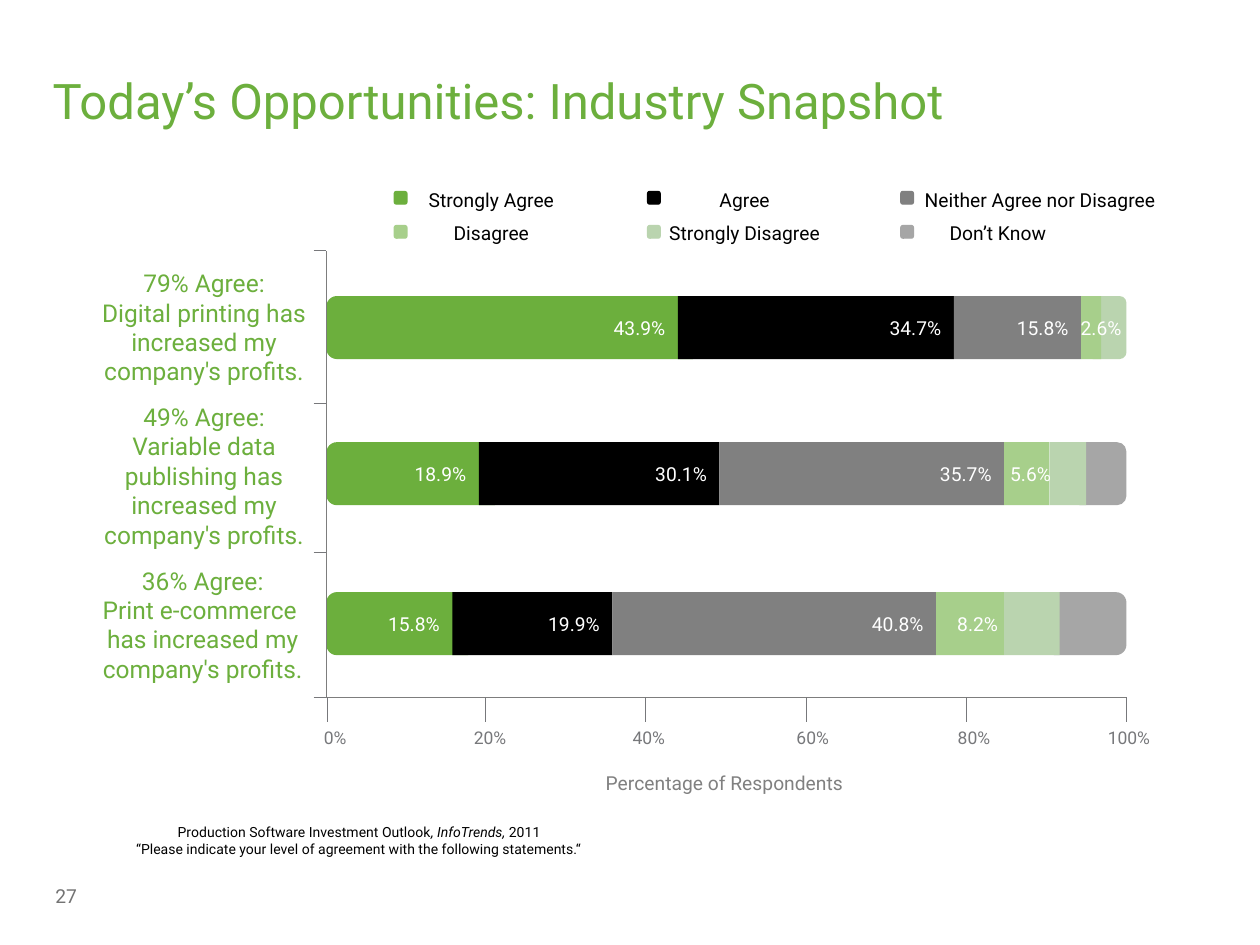
from dataclasses import dataclass

import pptx
import pptx.util
from lxml import etree
from pptx.dml.color import RGBColor
from pptx.enum.shapes import MSO_CONNECTOR, MSO_SHAPE
from pptx.enum.text import MSO_ANCHOR, PP_ALIGN
from pptx.oxml.ns import qn
from pptx.util import Inches

GREEN = RGBColor(0x6C, 0xAF, 0x3D)
MID_GREEN = RGBColor(0xA7, 0xCF, 0x8B)
PALE_GREEN = RGBColor(0xBA, 0xD4, 0xAF)
BLACK = RGBColor(0, 0, 0)
WHITE = RGBColor(0xFF, 0xFF, 0xFF)
GRAY = RGBColor(0x80, 0x80, 0x80)
LIGHT_GRAY = RGBColor(0xA6, 0xA6, 0xA6)
AXIS_GRAY = RGBColor(0x77, 0x78, 0x7B)
LINE_GRAY = RGBColor(0x7D, 0x7D, 0x7D)
PAGE_GRAY = RGBColor(0x73, 0x73, 0x73)

SEGMENT_COLORS = (GREEN, BLACK, GRAY, MID_GREEN, PALE_GREEN, LIGHT_GRAY)
AXIS_LEFT, AXIS_RIGHT, AXIS_TOP, AXIS_BOTTOM = 2.59, 8.94, 1.99, 5.53
BAR_HEIGHT = 0.5
FIRST_OVERLAP, LAST_OVERLAP = 0.2, 0.12  # rounded ends run under their neighbours
LABEL_WIDTH = 0.93


@dataclass
class Box:
    left: float
    top: float
    width: float
    height: float

    def lengths(self) -> list:
        return [Inches(v) for v in (self.left, self.top, self.width, self.height)]


@dataclass
class Bar:
    top: float
    edges: tuple  # right edges of all segments but the last
    labels: tuple
    small_label: tuple  # left and width of the fourth label
    statement: tuple  # paragraphs
    statement_box: Box


@dataclass
class LegendColumn:
    left: float
    entries: tuple  # name, colour, text width


BARS = (
    Bar(2.35, (5.38, 7.57, 8.58, 8.74), ("43.9%", "34.7%", "15.8%", "2.6%"), (8.07, 0.93),
        ("79% Agree:\vDigital printing has increased my company's profits.",),
        Box(0.64, 2.08, 1.96, 1.04)),
    Bar(3.51, (3.8, 5.71, 7.97, 8.33, 8.62), ("18.9%", "30.1%", "35.7%", "5.6%"), (7.85, 0.59),
        ("49% Agree:", "Variable data publishing has increased my company's profits."),
        Box(0.64, 3.14, 1.96, 1.28)),
    Bar(4.7, (3.59, 4.86, 7.43, 7.97, 8.41), ("15.8%", "19.9%", "40.8%", "8.2%"), (7.43, 0.59),
        ("36% Agree:", "Print e-commerce \vhas increased my company's profits."),
        Box(0.63, 4.44, 1.96, 1.04)),
)
LEGEND = (
    LegendColumn(3.13, (("Strongly Agree", GREEN, 1.27), ("Disagree", MID_GREEN, 1.27))),
    LegendColumn(5.14, (("Agree", BLACK, 1.27), ("Strongly Disagree", PALE_GREEN, 1.27))),
    LegendColumn(7.15, (("Neither Agree nor Disagree", GRAY, 1.94),
                        ("Don’t Know", LIGHT_GRAY, 1.27))),
)
# Tick position, label centre, label
TICKS = ((2.6, 2.66, "0%"), (3.85, 3.89, "20%"), (5.12, 5.15, "40%"),
         (6.4, 6.45, "60%"), (7.67, 7.73, "80%"), (8.94, 8.96, "100%"))
ROW_TICKS = (AXIS_TOP, 3.2, 4.38, AXIS_BOTTOM)


def add_text(shapes, box: Box, paragraphs: tuple, size: float, color: RGBColor,
             align=PP_ALIGN.CENTER, anchor=MSO_ANCHOR.TOP,
             insets: tuple = (0.1, 0.05, 0.1, 0.05)) -> None:
    """Each paragraph is a string or a tuple of (text, italic) runs."""
    tf = shapes.add_textbox(*box.lengths()).text_frame
    frame_format = {"word_wrap": True, "vertical_anchor": anchor}
    sides = ("margin_left", "margin_top", "margin_right", "margin_bottom")
    frame_format.update(zip(sides, map(Inches, insets)))
    for name, value in frame_format.items():
        setattr(tf, name, value)
    for i, content in enumerate(paragraphs):
        p = tf.paragraphs[0] if i == 0 else tf.add_paragraph()
        p.alignment = align
        if isinstance(content, str):
            p.text = content
        else:
            for text, italic in content:
                r = p.add_run()
                r.text = text
                r.font.italic = italic
        for r in p.runs:
            for name, value in {"name": "Roboto", "size": pptx.util.Pt(size)}.items():
                setattr(r.font, name, value)
            r.font.color.rgb = color


def add_block(shapes, box: Box, color: RGBColor, rounded: bool, outlined: bool = False) -> None:
    kind = MSO_SHAPE.ROUNDED_RECTANGLE if rounded else MSO_SHAPE.RECTANGLE
    sp = shapes.add_shape(kind, *box.lengths())
    sp.shadow.inherit = False
    sp.fill.solid()
    sp.fill.fore_color.rgb = color
    if outlined:
        sp.line.color.rgb = color
        sp.line.width = pptx.util.Pt(0.75)
    else:
        sp.line.fill.background()


def add_line(shapes, x1: float, y1: float, x2: float, y2: float,
             color: RGBColor = AXIS_GRAY) -> None:
    ends = [Inches(v) for v in (x1, y1, x2, y2)]
    line = shapes.add_connector(MSO_CONNECTOR.STRAIGHT, *ends)
    line.line.color.rgb = color
    line.line.width = pptx.util.Pt(0.25)
    etree.SubElement(line._element.spPr, qn("a:effectLst"))


def add_bar(shapes, bar: Bar) -> None:
    starts = (AXIS_LEFT,) + bar.edges
    ends = bar.edges + (AXIS_RIGHT,)
    last = len(ends) - 1
    # Rounded ends go first so that the inner segments cover their overlap
    for i in [0, last, *range(1, last)]:
        start = starts[i] - (LAST_OVERLAP if i == last else 0)
        end = ends[i] + (FIRST_OVERLAP if i == 0 else 0)
        box = Box(start, bar.top, end - start, BAR_HEIGHT)
        add_block(shapes, box, SEGMENT_COLORS[i], rounded=i in (0, last))
    places = [(edge - LABEL_WIDTH, LABEL_WIDTH) for edge in bar.edges[:3]]
    for label, (left, width) in zip(bar.labels, places + [bar.small_label]):
        add_text(shapes, Box(left, bar.top + 0.11, width, 0.29), (label,), 11, WHITE,
                 align=PP_ALIGN.RIGHT)
    add_text(shapes, bar.statement_box, bar.statement, 14, GREEN)


def add_legend_column(shapes, column: LegendColumn) -> None:
    group = shapes.add_group_shape().shapes
    for i, (name, color, width) in enumerate(column.entries):
        top = 1.52 + 0.27 * i
        add_block(group, Box(column.left, top, 0.1, 0.1), color, rounded=True, outlined=True)
        add_text(group, Box(column.left + 0.11, top - 0.03, width, 0.19), (name,), 11, BLACK,
                 insets=(0.05, 0, 0, 0))


def main() -> None:
    prs = pptx.Presentation()
    prs.slide_width, prs.slide_height = Inches(10), Inches(7.5)
    s = prs.slides.add_slide(prs.slide_layouts[6])
    shapes = s.shapes

    # Title, source note and page number
    add_text(shapes, Box(0.32, 0.17, 9, 1.25), ("Today’s Opportunities: Industry Snapshot",),
             28, GREEN, align=PP_ALIGN.LEFT, anchor=MSO_ANCHOR.MIDDLE)
    source = (("Production Software Investment Outlook", False), (", InfoTrends, ", True),
              ("2011", False))
    question = "“Please indicate your level of agreement with the following statements.“"
    add_text(shapes, Box(0.48, 6.49, 4.74, 0.37), (source, question), 8, BLACK)
    add_text(shapes, Box(0.33, 6.89, 0.59, 0.44), ("27",), 11, PAGE_GRAY,
             align=PP_ALIGN.LEFT, anchor=MSO_ANCHOR.MIDDLE, insets=(0.11, 0.06, 0.11, 0.06))

    # Stacked bars with their statements
    for bar in BARS:
        add_bar(shapes, bar)

    # Axes
    add_line(shapes, AXIS_LEFT, AXIS_BOTTOM, AXIS_RIGHT, AXIS_BOTTOM, LINE_GRAY)
    add_line(shapes, AXIS_LEFT, AXIS_BOTTOM, AXIS_LEFT, AXIS_TOP, LINE_GRAY)
    for x, center, label in TICKS:
        add_line(shapes, x, AXIS_BOTTOM + 0.2, x, AXIS_BOTTOM)
        add_text(shapes, Box(center - 0.33, 5.72, 0.66, 0.27), (label,), 10, AXIS_GRAY)
    for y in ROW_TICKS:
        add_line(shapes, AXIS_LEFT - 0.1, y, AXIS_LEFT, y)
    add_text(shapes, Box(4.07, 6.07, 3.26, 0.29), ("Percentage of Respondents",), 11, GRAY,
             insets=(0.2, 0.05, 0.1, 0.05))

    # Legend
    for column in LEGEND:
        add_legend_column(shapes, column)

    prs.save("out.pptx")


if __name__ == "__main__":
    main()
